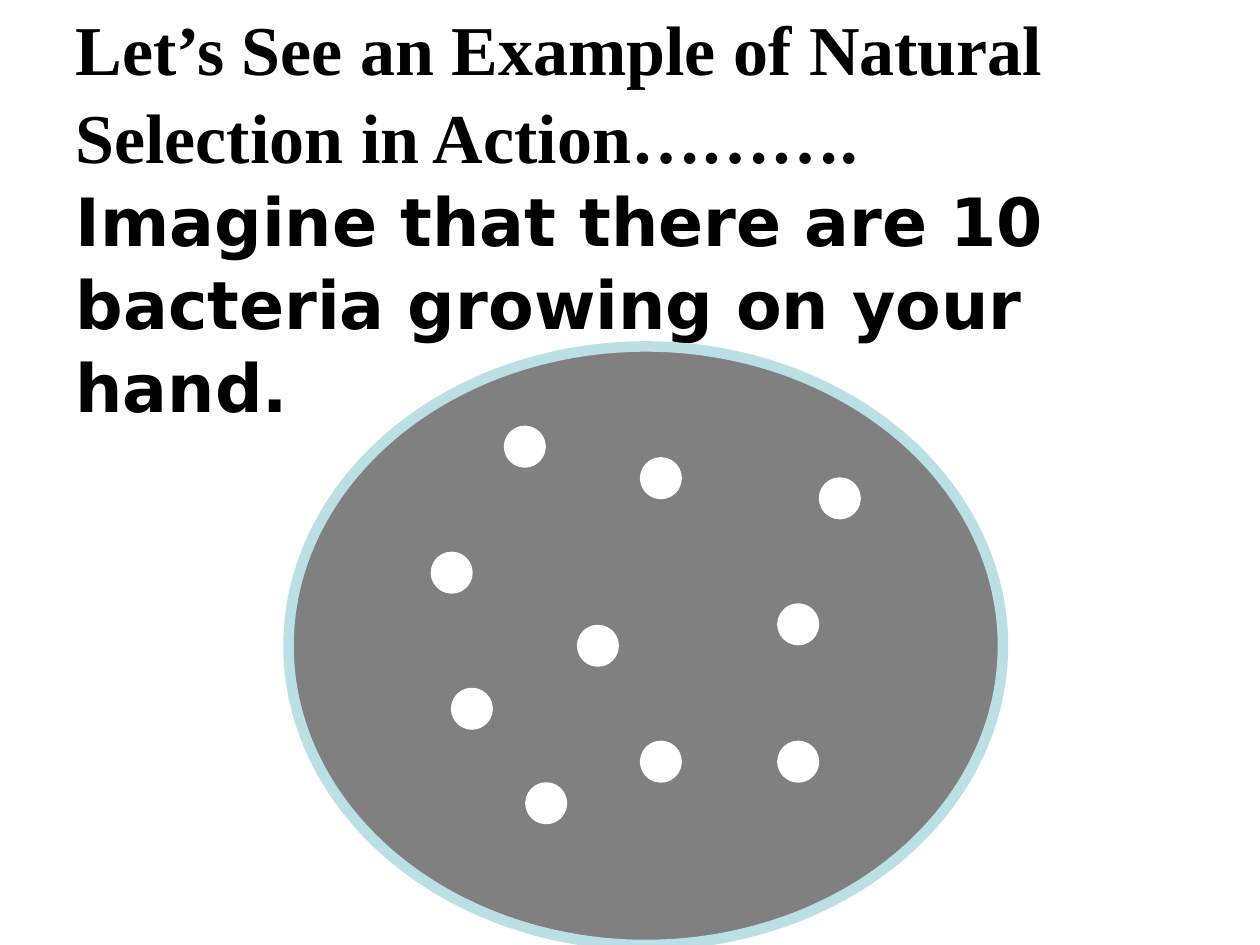
import pptx
import pptx.util
import pptx.dml.color
import pptx.enum.shapes
import pptx.enum.text

Inches = pptx.util.Inches
Pt = pptx.util.Pt
RGBColor = pptx.dml.color.RGBColor

BLACK = RGBColor(0x00, 0x00, 0x00)
WHITE = RGBColor(0xFF, 0xFF, 0xFF)
GRAY = RGBColor(0x80, 0x80, 0x80)
PALE_TEAL = RGBColor(0xBB, 0xE0, 0xE3)

HEADING = "Let’s See an Example of Natural Selection in Action………."
PROMPT = "Imagine that there are 10 bacteria growing on your hand."

# Left and top of each bacterium, relative to the dish
BACTERIUM_SIZE = 0.25
BACTERIA = [
    (1.17, 1.67), (2.83, 0.92), (2.33, 2.25), (1.33, 2.75), (3.92, 2.08),
    (2.83, 3.17), (3.92, 3.17), (1.75, 0.67), (4.25, 1.08), (1.92, 3.5),
]


def fill_title(title, left, top, width, height):
    title.left, title.top = Inches(left), Inches(top)
    title.width, title.height = Inches(width), Inches(height)
    frame = title.text_frame
    frame.word_wrap = True
    frame.auto_size = pptx.enum.text.MSO_AUTO_SIZE.NONE
    frame.vertical_anchor = pptx.enum.text.MSO_ANCHOR.TOP
    frame.margin_top = Inches(0.02)
    frame.margin_bottom = 0

    para = frame.paragraphs[0]
    para.text = HEADING + "\v" + PROMPT
    para.alignment = pptx.enum.text.PP_ALIGN.LEFT
    para.line_spacing = 1.04
    styles = [("Times New Roman", 40), ("DejaVu Sans", 38)]
    for span, (name, size) in zip(para.runs, styles):
        span.font.name = name
        span.font.size = Pt(size)
        span.font.bold = True
        span.font.color.rgb = BLACK


def add_oval(group, left, top, width, height, fill, line):
    oval = group.shapes.add_shape(
        pptx.enum.shapes.MSO_SHAPE.OVAL,
        Inches(left), Inches(top), Inches(width), Inches(height))
    oval.shadow.inherit = False
    oval.fill.solid()
    oval.fill.fore_color.rgb = fill
    oval.line.color.rgb = line
    oval.line.width = Pt(6)


def add_dish(page, left, top, width, height):
    group = page.shapes.add_group_shape()
    add_oval(group, left, top, width, height, GRAY, PALE_TEAL)
    for across, down in BACTERIA:
        add_oval(group, left + across, top + down,
                 BACTERIUM_SIZE, BACTERIUM_SIZE, WHITE, WHITE)


def main():
    deck = pptx.Presentation()
    deck.slide_width, deck.slide_height = Inches(10), Inches(7.5)
    page = deck.slides.add_slide(deck.slide_layouts[5])  # title only
    page.background.fill.solid()
    page.background.fill.fore_color.rgb = WHITE

    # Heading and prompt
    fill_title(page.shapes.title, 0.5, 0, 9.25, 3.25)
    # Dish with ten bacteria
    add_dish(page, 2.29, 2.75, 5.67, 4.75)

    deck.save("out.pptx")


if __name__ == "__main__":
    main()
